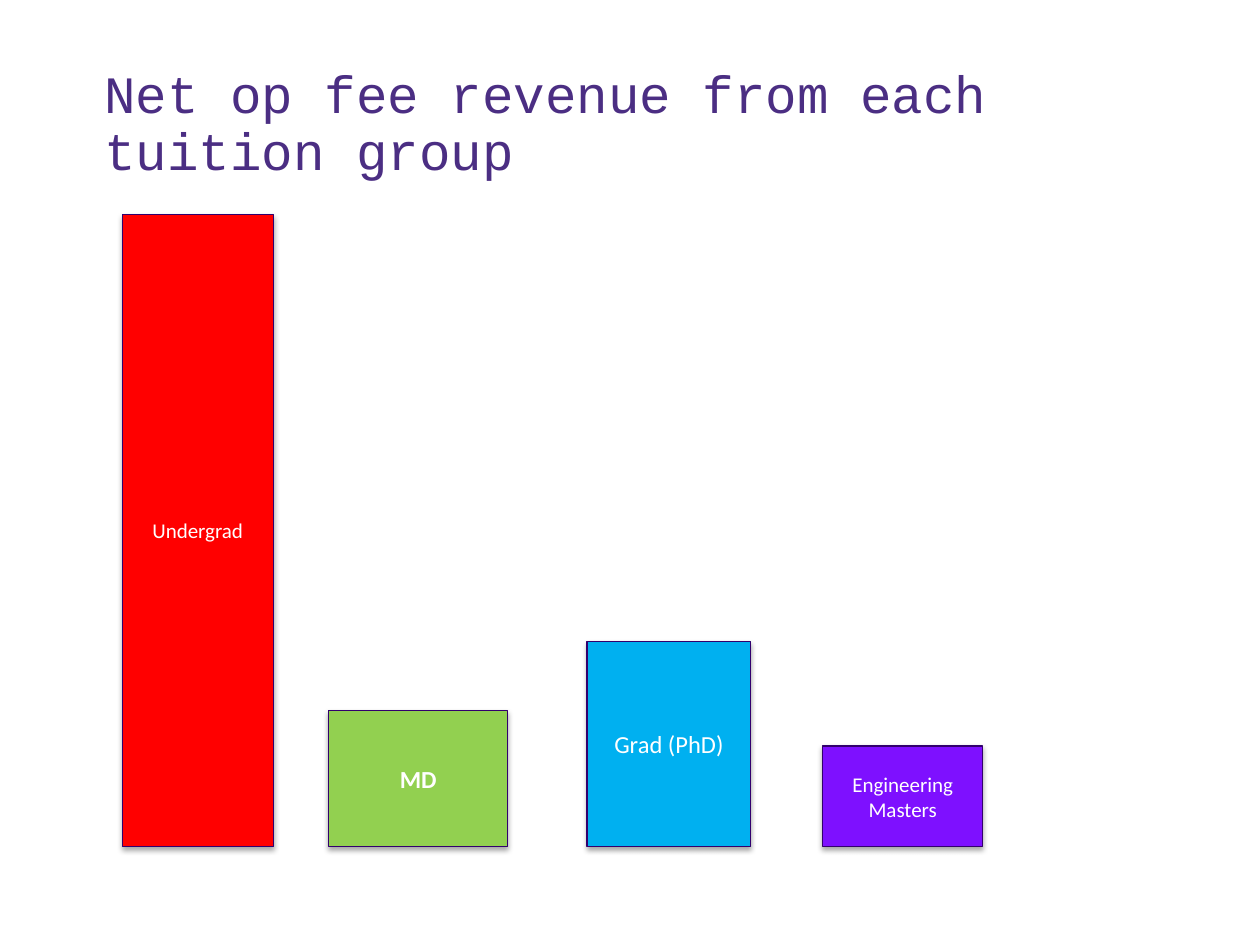
from lxml.etree import SubElement
from pptx import Presentation
from pptx.dml.color import RGBColor
from pptx.enum.shapes import MSO_SHAPE
from pptx.enum.text import MSO_ANCHOR, PP_ALIGN
from pptx.oxml.ns import qn
from pptx.util import Inches, Pt

PURPLE = RGBColor(0x4B, 0x2E, 0x83)
EDGE = RGBColor(0x32, 0x00, 0x6D)
WHITE = RGBColor(0xFF, 0xFF, 0xFF)
RED = RGBColor(0xFF, 0x00, 0x00)
GREEN = RGBColor(0x92, 0xD0, 0x50)
BLUE = RGBColor(0x00, 0xB0, 0xF0)
VIOLET = RGBColor(0x7E, 0x10, 0xFF)

BASE = 6.72  # common foot of the bars, in inches

# label, left, width, height, fill, text size, bold
BARS = [
    ("Undergrad", 0.97, 1.2, 5.02, RED, 12, False),
    ("MD", 2.61, 1.42, 1.08, GREEN, 14, True),
    ("Grad (PhD)", 4.66, 1.3, 1.63, BLUE, 14, False),
    ("Engineering Masters", 6.53, 1.27, 0.8, VIOLET, 12, False),
]


def put_text(shape, text, *, size, color, font="Calibri", bold=False,
             align=PP_ALIGN.CENTER, anchor=MSO_ANCHOR.MIDDLE, spacing=None):
    frame = shape.text_frame
    frame.word_wrap = True
    frame.vertical_anchor = anchor
    para = frame.paragraphs[0]
    para.alignment = align
    para.line_spacing = spacing
    run = para.add_run()
    run.text = text
    run.font.name = font
    run.font.size = Pt(size)
    run.font.bold = bold
    run.font.color.rgb = color


def add_shadow(shape):
    """Give the shape a soft black shadow just below it."""
    shape.shadow.inherit = False
    effects = shape._element.spPr.find(qn("a:effectLst"))
    outer = SubElement(effects, qn("a:outerShdw"), blurRad=str(Pt(3.1)),
                       dist=str(Pt(1.8)), dir="5400000", rotWithShape="0")
    black = SubElement(outer, qn("a:srgbClr"), val="000000")
    SubElement(black, qn("a:alpha"), val="35000")


def add_title(slide, text):
    box = slide.shapes.add_textbox(Inches(0.73), Inches(0.41),
                                   Inches(8.95), Inches(1.08))
    put_text(box, text, size=30, color=PURPLE, font="Courier New",
             align=PP_ALIGN.LEFT, anchor=MSO_ANCHOR.BOTTOM, spacing=0.9)


def add_bar(slide, label, left, width, height, fill, size, bold):
    bar = slide.shapes.add_shape(MSO_SHAPE.RECTANGLE, Inches(left),
                                 Inches(BASE - height), Inches(width),
                                 Inches(height))
    bar.fill.solid()
    bar.fill.fore_color.rgb = fill
    bar.line.color.rgb = EDGE
    bar.line.width = Pt(0.75)
    add_shadow(bar)
    put_text(bar, label, size=size, color=WHITE, bold=bold)


def main():
    deck = Presentation()
    deck.slide_width = Inches(10)
    deck.slide_height = Inches(7.5)
    slide = deck.slides.add_slide(deck.slide_layouts[6])
    add_title(slide, "Net op fee revenue from each tuition group")
    for bar in BARS:
        add_bar(slide, *bar)
    deck.save("out.pptx")


if __name__ == "__main__":
    main()
